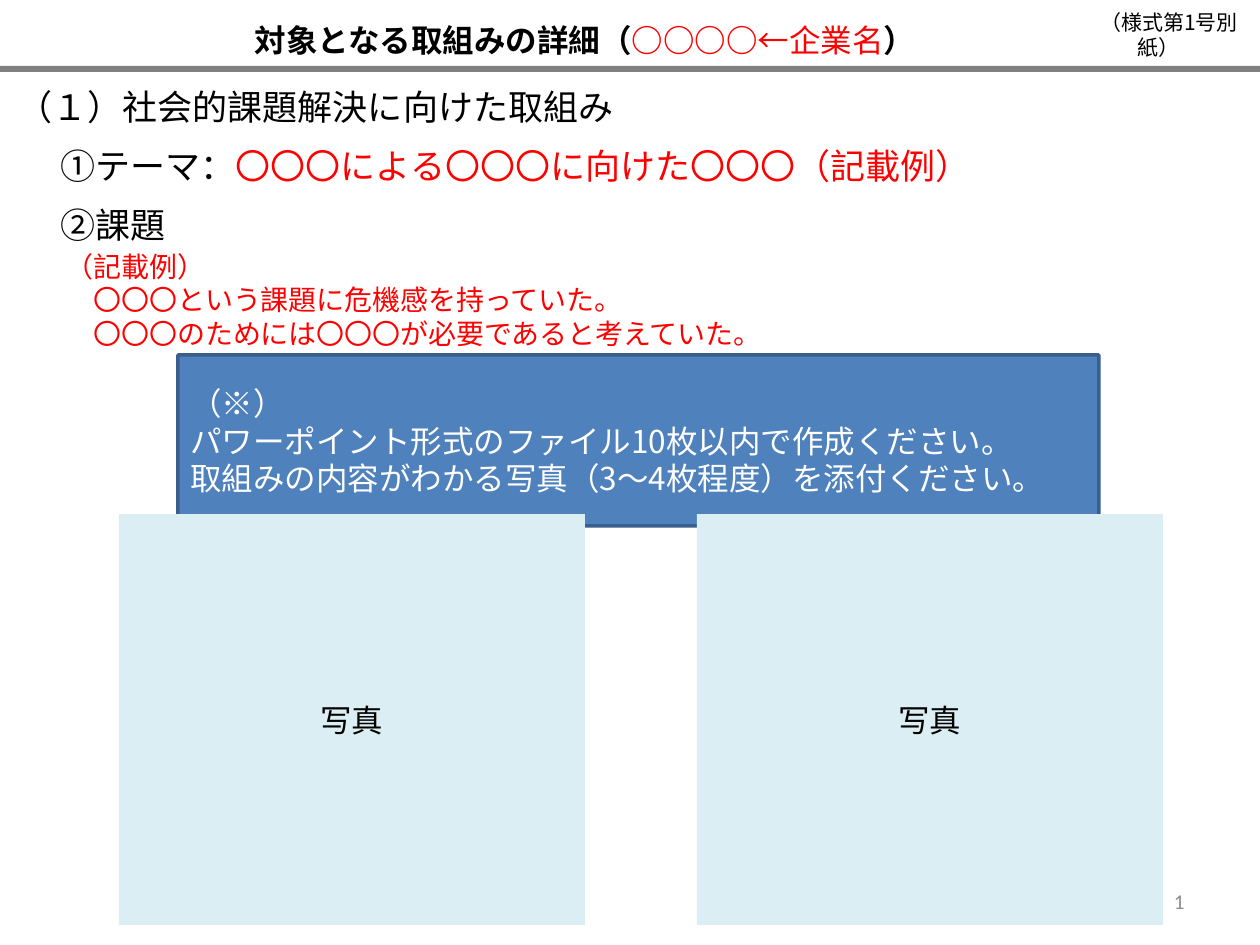
from lxml import etree
from pptx import Presentation
from pptx.dml.color import RGBColor
from pptx.enum.shapes import MSO_SHAPE
from pptx.enum.text import MSO_ANCHOR, MSO_AUTO_SIZE, PP_ALIGN
from pptx.oxml.ns import qn
from pptx.util import Emu, Pt

RECT, CALL = MSO_SHAPE.RECTANGLE, MSO_SHAPE.RECTANGULAR_CALLOUT
TOP, MID = MSO_ANCHOR.TOP, MSO_ANCHOR.MIDDLE
LEFT, MIDDLE, RIGHT = PP_ALIGN.LEFT, PP_ALIGN.CENTER, PP_ALIGN.RIGHT
JUST = PP_ALIGN.JUSTIFY
FIT = MSO_AUTO_SIZE.NONE
FONT = "Noto Sans CJK JP"
BLACK, WHITE, RED = "000000", "FFFFFF", "FF0000"
SCALE = 914400 / 126


def px(num):
    """Turn pixels into EMU."""
    return Emu(round(num * SCALE))


def color(code):
    """Turn a hex string into a colour."""
    return RGBColor.from_string(code)


def place(shape, box):
    """Move a shape to a box of left, top, width and height."""
    shape.left, shape.top, shape.width, shape.height = map(px, box)


def style(run, size, code, bold=False, font=FONT):
    """Set the type of one run, East Asian face included."""
    run.font.size, run.font.bold, run.font.name = Pt(size), bold, font
    run.font.color.rgb = color(code)
    face = etree.SubElement(run.font._element, qn("a:ea"))
    face.set("typeface", font)


def write(shape, lines, size, align=LEFT, anchor=TOP, font=FONT):
    """Fill a shape with lines made of (text, colour, bold) parts."""
    frame = shape.text_frame
    frame.word_wrap, frame.auto_size = True, FIT
    frame.vertical_anchor = anchor
    for num, parts in enumerate(lines):
        para = frame.add_paragraph() if num else frame.paragraphs[0]
        para.alignment = align
        para.line_spacing = Pt(size * 1.2)
        para.space_before = Pt(0)
        for text, code, bold in parts:
            run = para.add_run()
            run.text = text
            style(run, size, code, bold, font)


def label(slide, box, lines, size, align=LEFT, anchor=TOP, font=FONT):
    """Add a text box."""
    shape = slide.shapes.add_textbox(*map(px, box))
    write(shape, lines, size, align, anchor, font)


def block(slide, kind, box, fill):
    """Add a plain filled shape."""
    shape = slide.shapes.add_shape(kind, *map(px, box))
    shape.shadow.inherit = False
    shape.fill.solid()
    shape.fill.fore_color.rgb = color(fill)
    shape.line.fill.background()
    return shape


def title(slide):
    """Fill the title placeholder."""
    shape = slide.shapes.title
    place(shape, (5, 15, 1160, 50))
    parts = [("対象となる取組みの詳細（", BLACK, True), ("○○○○", RED, True),
             ("←企業名", RED, False), ("）", BLACK, True)]
    write(shape, [parts], 18, MIDDLE)


def sample(slide):
    """Fill the body placeholder with the sample answer."""
    shape = slide.placeholders[1]
    place(shape, (53, 243, 1171, 318))
    texts = ["（記載例）", "〇〇〇という課題に危機感を持っていた。",
             "〇〇〇のためには〇〇〇が必要であると考えていた。"]
    write(shape, [[(text, RED, False)] for text in texts], 16, JUST)
    for num, para in enumerate(shape.text_frame.paragraphs):
        props = para._p.get_or_add_pPr()
        props.set("marL", str(Pt(16) if num else 0))
        props.set("indent", "0")
        etree.SubElement(props, qn("a:buNone"))


def heads(slide):
    """Add the section headings and the form name."""
    theme = "〇〇〇による〇〇〇に向けた〇〇〇（記載例）"
    rows = [(5, 1090, [("（１）社会的課題解決に向けた取組み", BLACK, False)]),
            (48, 1090, [("①テーマ：", BLACK, False), (theme, RED, False)]),
            (48, 1249, [("②課題", BLACK, False)])]
    for num, (left, width, parts) in enumerate(rows):
        label(slide, (left, 79 + 59 * num, width, 55), [parts], 20)
    form = [("（様式第1号別紙）　", BLACK, False)]
    label(slide, (1065, 3, 208, 38), [form], 12, MIDDLE)


def note(slide):
    """Add the callout with the writing rules."""
    shape = block(slide, CALL, (178, 355, 921, 171), "4F81BD")
    shape.adjustments[0], shape.adjustments[1] = -0.4, 0.85
    shape.line.color.rgb = color("3A5F8C")
    shape.line.width = Pt(2)
    texts = ["（※）", "パワーポイント形式のファイル10枚以内で作成ください。",
             "取組みの内容がわかる写真（3～4枚程度）を添付ください。"]
    write(shape, [[(text, WHITE, False)] for text in texts], 18, LEFT, MID)


def photos(slide):
    """Add the two photo frames."""
    for left in (119, 697):
        shape = block(slide, RECT, (left, 514, 466, 411), "DBEEF4")
        write(shape, [[("写真", BLACK, False)]], 18, MIDDLE, MID)


def main():
    """Build and save the slide."""
    deck = Presentation()
    deck.slide_width, deck.slide_height = px(1260), px(945)
    slide = deck.slides.add_slide(deck.slide_layouts[1])
    title(slide)
    sample(slide)
    heads(slide)
    block(slide, RECT, (0, 66, 1260, 6), "808080")
    note(slide)
    label(slide, (903, 876, 294, 50), [[("1", "8C8C8C", False)]], 12,
          RIGHT, MID, "Calibri")
    photos(slide)
    deck.save("out.pptx")


if __name__ == "__main__":
    main()
